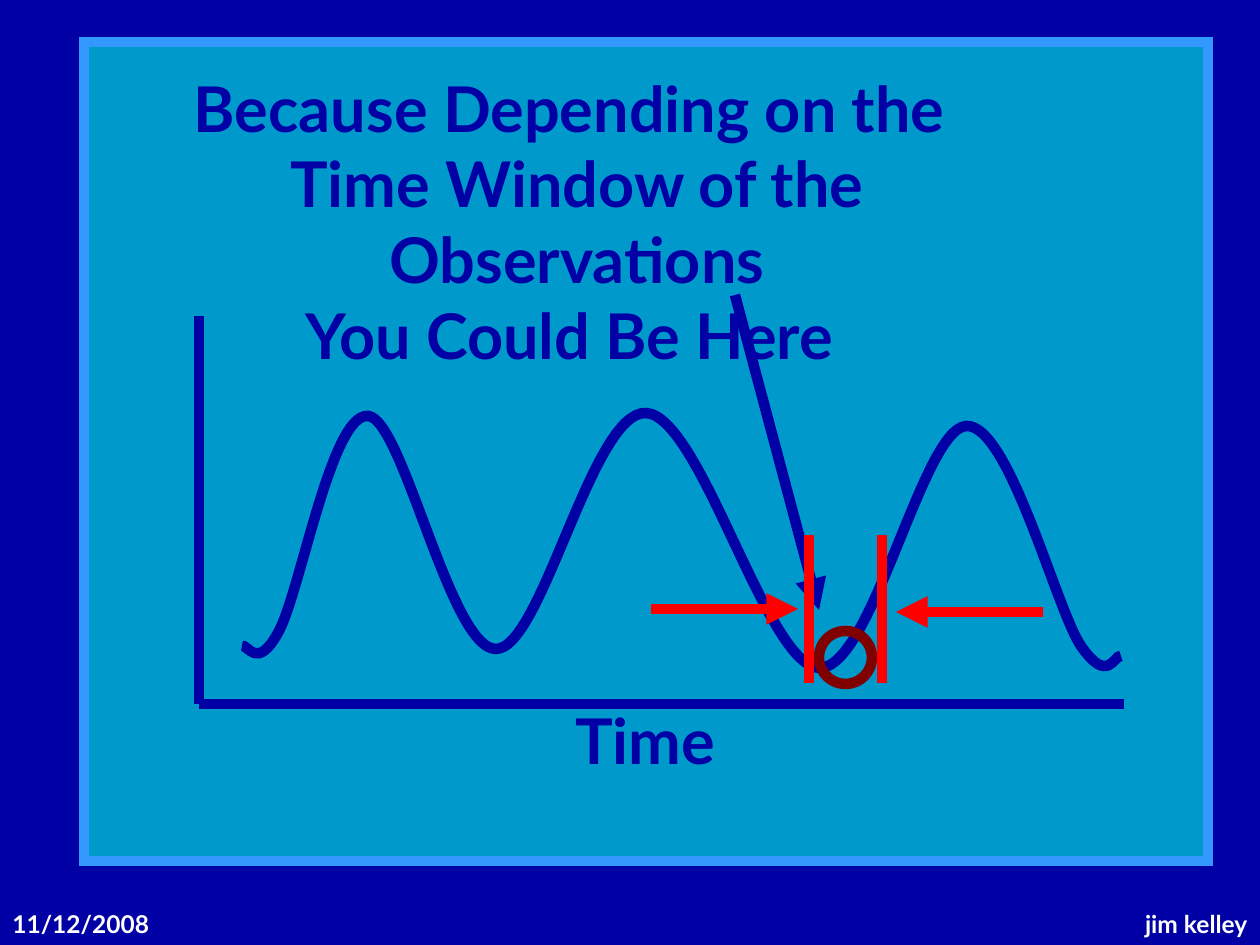
from itertools import chain

from lxml import etree
from pptx import Presentation
from pptx.dml.color import RGBColor
from pptx.enum import shapes, text
from pptx.oxml.ns import qn
from pptx.util import Pt

PX = 914400 / 126
NAVY, RED, MAROON, WHITE = "0000A4", "FF0000", "800000", "FFFFFF"
PANEL, BORDER = "0099CC", "3399FF"
STROKE = 6
LEFT, CENTER, RIGHT = text.PP_ALIGN.LEFT, text.PP_ALIGN.CENTER, text.PP_ALIGN.RIGHT
TOP, BOTTOM = text.MSO_ANCHOR.TOP, text.MSO_ANCHOR.BOTTOM

WAVE_START = (43, 330)
WAVE_CURVES = [
    ((49, 328), (58, 355), (79, 317)),
    ((101, 279), (132, 97), (169, 100)),
    ((204, 102), (251, 333), (297, 333)),
    ((343, 333), (393, 95), (447, 97)),
    ((502, 100), (567, 349), (620, 352)),
    ((673, 354), (723, 114), (767, 110)),
    ((810, 107), (857, 293), (882, 330)),
    ((909, 369), (915, 339), (922, 340)),
]


def emu(*lengths):
    """Turn px lengths into EMU."""
    return [round(length * PX) for length in lengths]


def rgb(value):
    """Return the colour for a hex string."""
    return RGBColor.from_string(value)


def apply(target, formats):
    """Set each attribute of target from a dict."""
    for name, value in formats.items():
        setattr(target, name, value)


def outline(shape, color, fill=None):
    """Give a shape its heavy mitred outline and an optional solid fill."""
    shape.shadow.inherit = False
    shape.line.width = Pt(STROKE)
    shape.line.color.rgb = rgb(color)
    join = etree.SubElement(shape.line._get_or_add_ln(), qn("a:miter"))
    join.set("lim", "800000")
    if fill:
        shape.fill.solid()
        shape.fill.fore_color.rgb = rgb(fill)
    else:
        shape.fill.background()


def write(holder, box, lines, size, color, align=LEFT, anchor=TOP):
    """Place a text holder at box and fill it with bold paragraphs."""
    apply(holder, dict(zip(("left", "top", "width", "height"), emu(*box))))
    frame = holder.text_frame
    frame.text = "\n".join(lines)
    apply(frame, {"word_wrap": True, "auto_size": text.MSO_AUTO_SIZE.NONE,
                  "vertical_anchor": anchor})
    for paragraph in frame.paragraphs:
        paragraph.alignment = align
        for run in paragraph.runs:
            apply(run.font, {"name": "Lato", "size": Pt(size), "bold": True})
            run.font.color.rgb = rgb(color)


def label(slide, box, line, size, color, **formats):
    """Add a one-line text box."""
    write(slide.shapes.add_textbox(0, 0, 0, 0), box, [line], size, color, **formats)


def stroke(slide, start, end, color, arrow=False):
    """Draw a straight line, with an arrowhead at its end if asked."""
    line = slide.shapes.add_connector(
        shapes.MSO_CONNECTOR.STRAIGHT, *emu(*start, *end))
    line.line.width = Pt(STROKE)
    line.line.color.rgb = rgb(color)
    if arrow:
        head = etree.SubElement(line.line._get_or_add_ln(), qn("a:tailEnd"))
        head.set("type", "triangle")
    etree.SubElement(line.element.spPr, qn("a:effectLst"))


def bend(shape):
    """Turn every three straight segments of a freeform into one cubic curve."""
    segments = list(shape.element.iter(qn("a:lnTo")))
    for first in range(0, len(segments), 3):
        curve = etree.Element(qn("a:cubicBezTo"))
        segments[first].addprevious(curve)
        for segment in segments[first:first + 3]:
            curve.append(segment[0])
            segment.getparent().remove(segment)


def draw_panel(slide, box):
    """Draw the framed panel with the title on it."""
    left, top, width, height = box
    panel = slide.shapes.add_shape(shapes.MSO_SHAPE.RECTANGLE, *emu(*box))
    outline(panel, BORDER, PANEL)
    title = slide.shapes.title
    panel.element.addnext(title.element)
    write(title, (left + 16, top + 21, 954, 239),
          ["Because Depending on the ", "Time Window of the Observations",
           "You Could Be Here "], 36, NAVY, align=CENTER)


def draw_wave(slide, place):
    """Draw the wave as one open curve."""
    builder = slide.shapes.build_freeform(*emu(*place(*WAVE_START)))
    points = chain.from_iterable(WAVE_CURVES)
    builder.add_line_segments([emu(*place(*point)) for point in points], close=False)
    wave = builder.convert_to_shape()
    bend(wave)
    outline(wave, NAVY)


def draw_graph(slide, box):
    """Draw the axes, the wave and the marked time window."""
    left, top, width, height = box

    def place(x, y):
        """Move a point of the graph onto the slide."""
        return left + x, top + y

    origin = place(0, height)
    stroke(slide, place(0, 0), origin, NAVY)
    stroke(slide, origin, place(width, height), NAVY)
    label(slide, (*place(364, height - 9), 174, 88), "Time", 36, NAVY)
    draw_wave(slide, place)
    stroke(slide, place(536, -21), place(620, 294), NAVY, arrow=True)
    ring = slide.shapes.add_shape(
        shapes.MSO_SHAPE.OVAL, *emu(*place(620, 315), 53, 53))
    outline(ring, MAROON)
    for edge in (683, 610):
        stroke(slide, place(edge, 219), place(edge, 367), RED)
    for tail, tip, y in ((452, 599, 293), (844, 697, 296)):
        stroke(slide, place(tail, y), place(tip, y), RED, arrow=True)


def draw_footer(slide, box):
    """Write the date at the left and the author at the right."""
    left, top, width, height = box
    label(slide, (left, top, 315, height), "11/12/2008", 14, WHITE, anchor=BOTTOM)
    label(slide, (left + width - 399, top, 399, height), "jim kelley", 14, WHITE,
          align=RIGHT, anchor=BOTTOM)


def main():
    """Build the slide and save it."""
    deck = Presentation()
    deck.slide_width, deck.slide_height = emu(1260, 945)
    slide = deck.slides.add_slide(deck.slide_layouts[5])
    slide.background.fill.solid()
    slide.background.fill.fore_color.rgb = rgb(NAVY)
    draw_footer(slide, (0, 879, 1260, 66))
    draw_panel(slide, (84, 42, 1124, 819))
    draw_graph(slide, (199, 316, 925, 388))
    deck.save("out.pptx")


if __name__ == "__main__":
    main()
